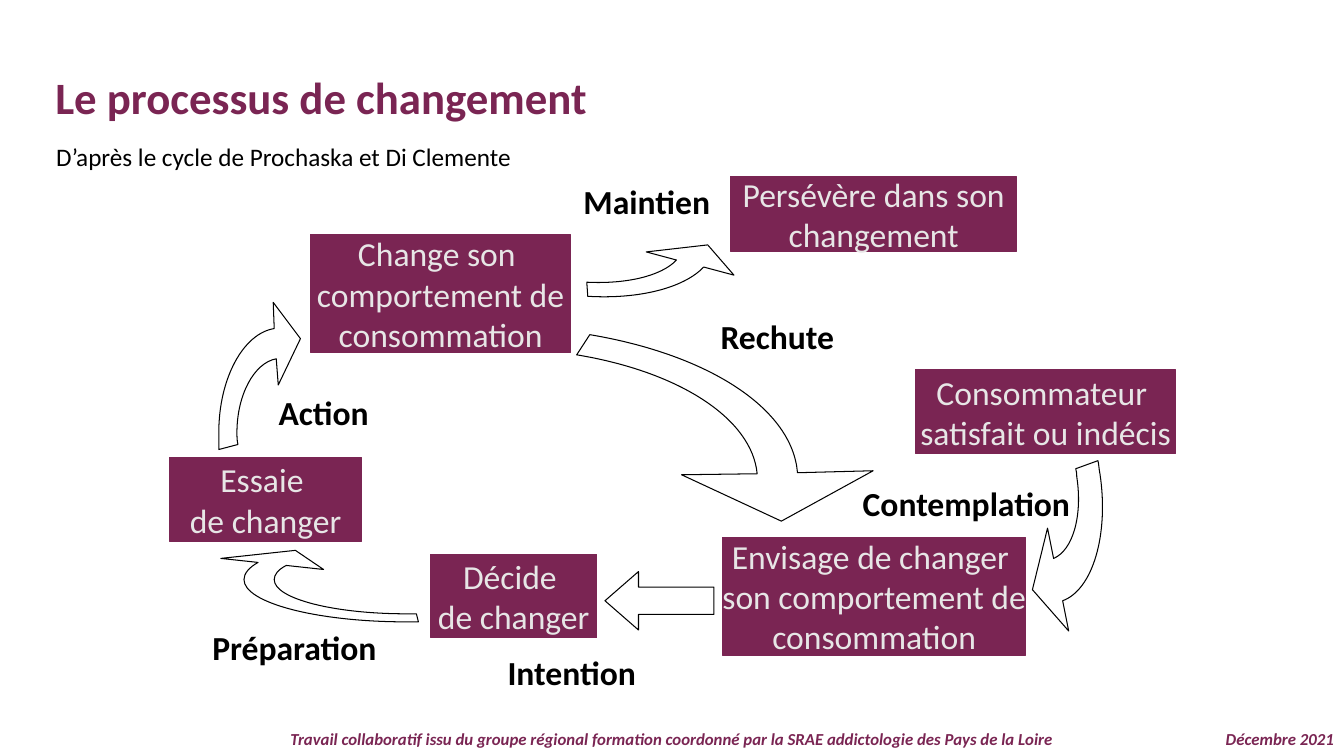
import pptx
import pptx.util
import pptx.dml.color
import pptx.enum.shapes
import pptx.enum.text
import pptx.oxml.ns
import lxml.etree

Inches = pptx.util.Inches
Pt = pptx.util.Pt
Align = pptx.enum.text.PP_ALIGN
Anchor = pptx.enum.text.MSO_ANCHOR
Kind = pptx.enum.shapes.MSO_SHAPE
qn = pptx.oxml.ns.qn

PLUM = "7A2553"
PALE = "E7E6E6"
BLACK = "000000"
WHITE = "FFFFFF"


def tint(code):
    return pptx.dml.color.RGBColor.from_string(code)


def write(frame, text, size=24, color=BLACK, bold=False, italic=False,
          align=Align.LEFT, anchor=Anchor.TOP, wrap=True, space=None, inset=0.1):
    frame.word_wrap = wrap
    frame.vertical_anchor = anchor
    frame.margin_left = frame.margin_right = Inches(inset)
    frame.text = text
    for para in frame.paragraphs:
        para.alignment = align
        para.line_spacing = space
        for run in para.runs:
            font = run.font
            font.name = "Calibri"
            font.size = Pt(size)
            font.bold = bold
            font.italic = italic
            font.color.rgb = tint(color)


def bend(shape, steps):
    lines = list(shape._element.iter(qn("a:lnTo")))
    for step in steps:
        count = len(step) // 2
        group, lines = lines[:count], lines[count:]
        if count == 3:
            arc = lxml.etree.Element(qn("a:cubicBezTo"))
            group[0].addprevious(arc)
            for line in group:
                arc.append(line[0])
                line.getparent().remove(line)


class Board:
    def __init__(self, slide):
        self.shapes = slide.shapes

    def paint(self, shape, fill, line):
        shape.shadow.inherit = False
        if fill:
            shape.fill.solid()
            shape.fill.fore_color.rgb = tint(fill)
        else:
            shape.fill.background()
        shape.line.color.rgb = tint(line)
        shape.line.width = Pt(0.75)

    def text(self, spot, words, **style):
        box = self.shapes.add_textbox(*map(Inches, spot))
        write(box.text_frame, words, **style)

    def label(self, left, top, width, words):
        self.text((left, top, width, 0.33), words, bold=True, inset=0,
                  align=Align.CENTER, anchor=Anchor.MIDDLE, wrap=False)

    def stage(self, spot, words):
        box = self.shapes.add_shape(Kind.RECTANGLE, *map(Inches, spot))
        self.paint(box, PLUM, PLUM)
        write(box.text_frame, words, color=PALE, align=Align.CENTER,
              anchor=Anchor.MIDDLE, wrap=False, inset=0)

    def arrow(self, spot, *ratios):
        shape = self.shapes.add_shape(Kind.LEFT_ARROW, *map(Inches, spot))
        for i, ratio in enumerate(ratios):
            shape.adjustments[i] = ratio
        self.paint(shape, WHITE, BLACK)

    def curve(self, start, steps, fill=WHITE):
        points = [(Inches(step[i]), Inches(step[i + 1]))
                  for step in steps for i in range(0, len(step), 2)]
        pen = self.shapes.build_freeform(*map(Inches, start))
        pen.add_line_segments(points, close=True)
        shape = pen.convert_to_shape()
        bend(shape, steps)
        self.paint(shape, fill, BLACK)


STAGES = [
    ((9.08, 3.67, 2.58, 0.83), "Consommateur \nsatisfait ou indécis"),
    ((7.17, 5.33, 3, 1.17), "Envisage de changer \nson comportement de\nconsommation"),
    ((4.27, 5.5, 1.65, 0.83), "Décide \vde changer"),
    ((1.68, 4.54, 1.91, 0.83), "Essaie \vde changer"),
    ((3.08, 2.33, 2.58, 1.17), "Change son \ncomportement de\nconsommation"),
    ((7.25, 1.75, 2.83, 0.75), "Persévère dans son\nchangement"),
]

CONTEMPLATION = (10.45, 5.54), [
    (10.64, 5.46, 10.74, 5.12, 10.68, 4.73), (10.68, 4.71, 10.68, 4.68, 10.67, 4.65),
    (10.89, 4.57), (10.9, 4.61, 10.9, 4.66, 10.91, 4.7),
    (11, 5.3, 10.84, 5.85, 10.54, 5.96), (10.6, 6.26), (10.24, 5.85), (10.39, 5.24),
]
PREPARATION = (2.84, 5.61), [
    (2.76, 5.65, 2.72, 5.7, 2.72, 5.75), (2.72, 5.94, 3.31, 6.09, 4.03, 6.09),
    (4.07, 6.09, 4.1, 6.09, 4.13, 6.09), (4.15, 6.17),
    (4.11, 6.17, 4.07, 6.17, 4.03, 6.17), (3.14, 6.17, 2.42, 5.98, 2.42, 5.75),
    (2.42, 5.69, 2.47, 5.63, 2.56, 5.58), (2.19, 5.54), (2.93, 5.46), (3.21, 5.65),
]
ACTION = (2.74, 3.56), [
    (2.52, 3.6, 2.35, 3.92, 2.35, 4.29), (2.35, 4.33, 2.35, 4.37, 2.36, 4.41),
    (2.17, 4.46), (2.17, 4.4, 2.17, 4.35, 2.17, 4.29),
    (2.17, 3.76, 2.41, 3.31, 2.72, 3.26), (2.71, 3), (2.98, 3.36), (2.76, 3.82),
]
RECHUTE = (7.51, 4.7), [
    (7.46, 4.16, 6.75, 3.69, 5.72, 3.52), (5.85, 3.32),
    (7.04, 3.52, 7.86, 4.06, 7.91, 4.69), (8.66, 4.67), (7.75, 5.17), (6.76, 4.71),
]
MAINTIEN = (6.71, 2.58), [
    (6.56, 2.74, 6.21, 2.82, 5.82, 2.8), (5.83, 2.94),
    (6.33, 2.97, 6.78, 2.86, 6.98, 2.65), (7.28, 2.73), (7.02, 2.43), (6.41, 2.5),
]

LABELS = [
    (6.25, 3.17, 2.92, "Rechute"),
    (8.46, 4.83, 2.25, "Contemplation"),
    (4.42, 6.5, 2.5, "Intention"),
    (1.92, 6.25, 2, "Préparation"),
    (2.5, 3.92, 1.42, "Action"),
    (5.75, 1.83, 1.33, "Maintien"),
]


def main():
    deck = pptx.Presentation()
    deck.slide_width = Inches(13.33)
    deck.slide_height = Inches(7.5)
    board = Board(deck.slides.add_slide(deck.slide_layouts[6]))

    foot = dict(size=12, color=PLUM, bold=True, italic=True, space=0.9)
    board.text((0, 7.2, 13.33, 0.3),
               "Travail collaboratif issu du groupe régional formation coordonné "
               "par la SRAE addictologie des Pays de la Loire",
               align=Align.CENTER, **foot)
    board.text((11.63, 7.2, 1.7, 0.3), "Décembre 2021", align=Align.RIGHT, **foot)

    for spot, words in STAGES:
        board.stage(spot, words)

    board.curve(*CONTEMPLATION, fill=None)
    board.arrow((6, 5.67, 1.08, 0.58), 0.468, 0.574)
    for start, steps in (PREPARATION, ACTION, RECHUTE, MAINTIEN):
        board.curve(start, steps)

    for row in LABELS:
        board.label(*row)

    board.text((0.45, 0.64, 12.97, 0.64), "Le processus de changement",
               size=32, color=PLUM, bold=True)
    board.text((0.46, 1.35, 6.54, 0.4),
               "D’après le cycle de Prochaska et Di Clemente", size=18)
    deck.save("out.pptx")


if __name__ == "__main__":
    main()
